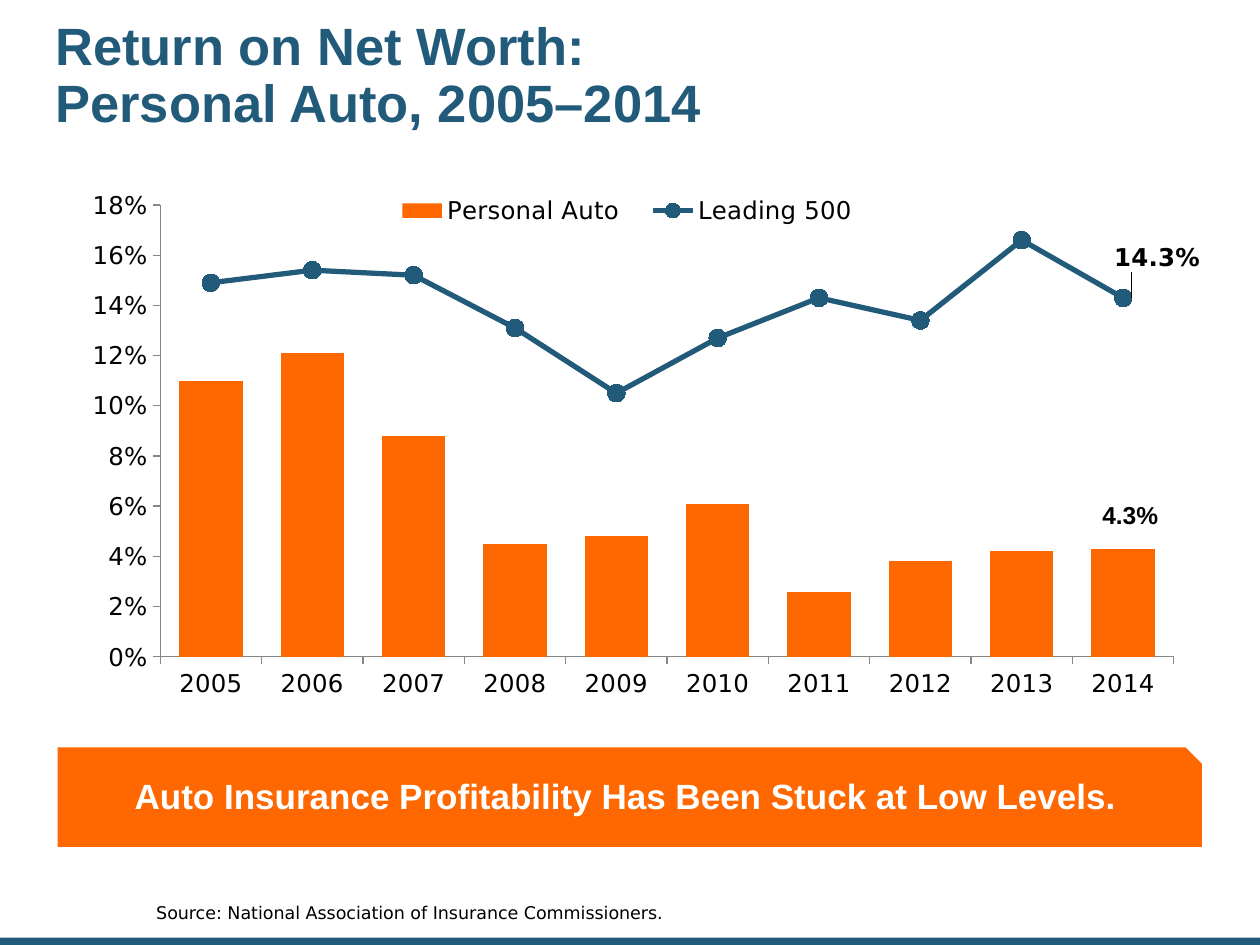
from pptx import Presentation
from pptx.chart.data import CategoryChartData
from pptx.dml.color import RGBColor
from pptx.enum.chart import XL_CHART_TYPE, XL_LABEL_POSITION, XL_LEGEND_POSITION, XL_MARKER_STYLE, XL_TICK_MARK
from pptx.enum.shapes import MSO_SHAPE
from pptx.enum.text import MSO_ANCHOR, MSO_AUTO_SIZE, PP_ALIGN
from pptx.oxml import parse_xml
from pptx.oxml.ns import nsdecls, qn
from pptx.oxml.xmlchemy import OxmlElement
from pptx.util import Pt

TITLE = "Return on Net Worth:\vPersonal Auto, 2005–2014"
MESSAGE = "Auto Insurance Profitability Has Been Stuck at Low Levels."
SOURCE = "Source: National Association of Insurance Commissioners."
BAR_LABEL = "4.3%"
YEARS = [str(year) for year in range(2005, 2015)]
RETURNS = {
    "Personal Auto": [0.11, 0.121, 0.088, 0.045, 0.048, 0.061, 0.026, 0.038, 0.042, 0.043],
    "Leading 500": [0.149, 0.154, 0.152, 0.131, 0.105, 0.127, 0.143, 0.134, 0.166, 0.143],
}

THEME = {
    "blue": RGBColor(0x22, 0x5A, 0x7A),
    "orange": RGBColor(0xFF, 0x68, 0x01),
    "black": RGBColor(0, 0, 0),
    "white": RGBColor(255, 255, 255),
    "axis": RGBColor(0x86, 0x86, 0x86),
    "head": "Arial",
    "body": "DejaVu Sans",
    "title": 30, "message": 20, "label": 14, "source": 10,
}


def set_attrs(target, **values):
    for name, value in values.items():
        setattr(target, name, value)


def set_font(font, size, face, color, bold=False):
    set_attrs(font, size=Pt(THEME[size]), name=THEME[face], bold=bold)
    font.color.rgb = THEME[color]


def write(sp, text, font, insets, anchor, align=PP_ALIGN.LEFT, spacing=0.9, wrap=True):
    tf = sp.text_frame
    names = ("margin_left", "margin_top", "margin_right", "margin_bottom")
    set_attrs(tf, word_wrap=wrap, vertical_anchor=anchor,
              **dict(zip(names, map(Pt, insets))))
    p = tf.paragraphs[0]
    set_attrs(p, text=text, alignment=align, line_spacing=spacing)
    for r in p.runs:
        set_font(r.font, *font)
    return tf


def add_box(s, box, color, shape=MSO_SHAPE.RECTANGLE):
    sp = s.shapes.add_shape(shape, *map(Pt, box))
    sp.shadow.inherit = False
    sp.fill.solid()
    sp.fill.fore_color.rgb = THEME[color]
    sp.line.fill.background()
    return sp


def add_text(s, box, *args, **options):
    return write(s.shapes.add_textbox(*map(Pt, box)), *args, **options)


def make_layout(inner=False, **values):
    layout = OxmlElement("c:layout")
    manual = OxmlElement("c:manualLayout")
    layout.append(manual)
    items = {"layoutTarget": "inner"} if inner else {}
    if "w" in values:
        items.update(xMode="edge", yMode="edge")
    for name, value in {**items, **values}.items():
        child = OxmlElement(f"c:{name}")
        child.set("val", str(value))
        manual.append(child)
    return layout


def replace_layout(parent, layout, after=None):
    for old in parent.findall(qn("c:layout")):
        parent.remove(old)
    if after is None:
        parent.insert(0, layout)
    else:
        after.addnext(layout)


def move_to_line(chart):
    bar = chart.plots[0]._element
    ser = bar.findall(qn("c:ser"))[1]
    for child in ser.findall(qn("c:invertIfNegative")):
        ser.remove(child)
    axes = "".join(f'<c:axId val="{ax.get("val")}"/>' for ax in bar.findall(qn("c:axId")))
    line = parse_xml(f'<c:lineChart {nsdecls("c")}><c:grouping val="standard"/>'
                     f'<c:varyColors val="0"/><c:marker val="1"/>{axes}</c:lineChart>')
    line.insert(2, ser)
    bar.addnext(line)


def style_line(series):
    series.smooth = False
    set_attrs(series.format.line, width=Pt(3))
    series.format.line.color.rgb = THEME["blue"]
    set_attrs(series.marker, style=XL_MARKER_STYLE.CIRCLE, size=10)
    series.marker.format.fill.solid()
    series.marker.format.fill.fore_color.rgb = THEME["blue"]
    series.marker.format.line.color.rgb = THEME["blue"]
    series.data_labels.show_value = False
    label = series.points[len(YEARS) - 1].data_label
    set_font(label.font, "label", "body", "black", True)
    label.position = XL_LABEL_POSITION.RIGHT
    labels = series.data_labels._element
    item = labels.find(qn("c:dLbl"))
    replace_layout(item, make_layout(x=-0.02, y=-0.07), item.find(qn("c:idx")))
    for old in labels.findall(qn("c:showLeaderLines")):
        labels.remove(old)
    labels.append(parse_xml(
        f'<c:extLst {nsdecls("c")}><c:ext uri="{{CE6537A1-D6FC-4f65-9D91-7224C49458BB}}" '
        'xmlns:c15="http://schemas.microsoft.com/office/drawing/2012/chart">'
        '<c15:showLeaderLines val="1"/></c:ext></c:extLst>'))


def add_returns_chart(s, box):
    data = CategoryChartData(number_format="0.0%")
    data.categories = YEARS
    for name, values in RETURNS.items():
        data.add_series(name, values)
    chart = s.shapes.add_chart(XL_CHART_TYPE.COLUMN_CLUSTERED, *map(Pt, box), data).chart
    set_font(chart.font, "label", "body", "black")
    set_attrs(chart, has_title=False, has_legend=True)
    set_attrs(chart.legend, position=XL_LEGEND_POSITION.BOTTOM, include_in_layout=False)
    legend = chart.legend._element
    replace_layout(legend, make_layout(x=0.28, y=0.03, w=0.44, h=0.06),
                   legend.find(qn("c:legendPos")))
    plot_area = chart._chartSpace.chart.plotArea
    replace_layout(plot_area, make_layout(True, x=0.09, y=0.05, w=0.89, h=0.79))
    for axis in (chart.category_axis, chart.value_axis):
        set_attrs(axis, has_major_gridlines=False, major_tick_mark=XL_TICK_MARK.OUTSIDE)
        axis.format.line.color.rgb = THEME["axis"]
    set_attrs(chart.value_axis, minimum_scale=0, maximum_scale=0.18, major_unit=0.02)
    set_attrs(chart.value_axis.tick_labels, number_format="0%", number_format_is_linked=False)
    move_to_line(chart)
    bars, line = chart.plots
    set_attrs(bars, gap_width=60, vary_by_categories=False)
    bars.series[0].format.fill.solid()
    bars.series[0].format.fill.fore_color.rgb = THEME["orange"]
    style_line(line.series[0])


def main():
    prs = Presentation()
    set_attrs(prs, slide_width=Pt(720), slide_height=Pt(540))
    s = prs.slides.add_slide(prs.slide_layouts[6])
    add_box(s, (0, 535.8, 720, 4.2), "blue")
    add_text(s, (28, 6.5, 666, 75), TITLE, ("title", "head", "blue", True),
             (3.6,) * 4, MSO_ANCHOR.MIDDLE)
    add_text(s, (89.3, 495.4, 604.8, 32.4), SOURCE, ("source", "body", "black"),
             (0,) * 4, MSO_ANCHOR.BOTTOM)
    message = add_box(s, (33, 427, 653.8, 56.9), "orange", MSO_SHAPE.SNIP_1_RECTANGLE)
    write(message, MESSAGE, ("message", "head", "white", True),
          (7.2, 3.6, 7.2, 7.2), MSO_ANCHOR.MIDDLE, PP_ALIGN.CENTER)
    add_returns_chart(s, (33, 100.8, 653, 326.9))
    tf = add_text(s, (622.8, 282.2, 46.8, 24.5), BAR_LABEL, ("label", "head", "black", True),
                  (7.2, 3.6, 7.2, 3.6), MSO_ANCHOR.TOP, spacing=1.0, wrap=False)
    tf.auto_size = MSO_AUTO_SIZE.SHAPE_TO_FIT_TEXT
    prs.save("out.pptx")


if __name__ == "__main__":
    main()
